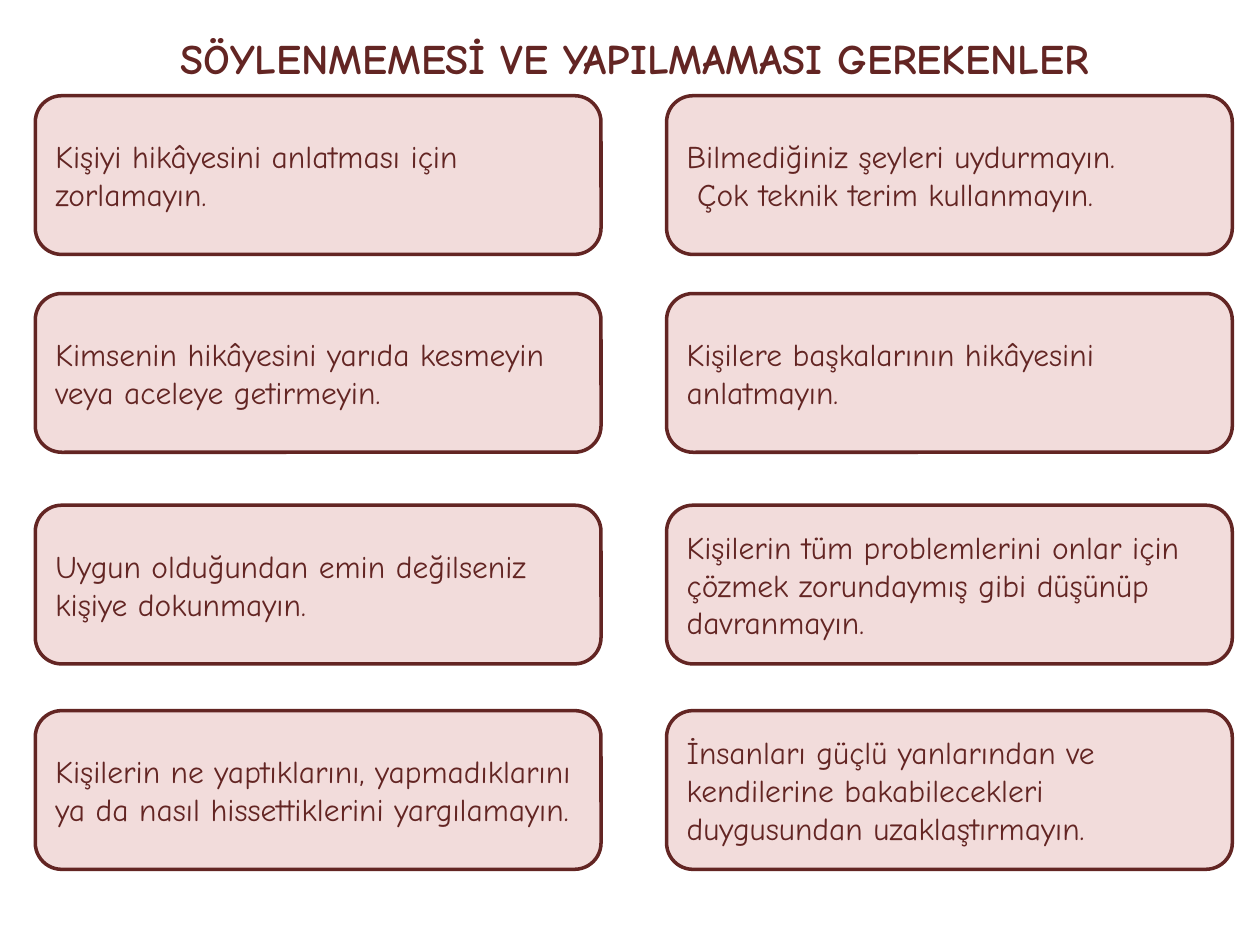
from dataclasses import dataclass

from pptx import Presentation
from pptx.dml.color import RGBColor
from pptx.enum.shapes import MSO_SHAPE
from pptx.enum.text import MSO_ANCHOR, PP_ALIGN
from pptx.util import Pt

EMU_PER_PX = 9144


def px(n):
    return n * EMU_PER_PX


@dataclass(frozen=True)
class Theme:
    font: str = "Comic Neue"
    ink: RGBColor = RGBColor(0x63, 0x25, 0x23)
    card_fill: RGBColor = RGBColor(0xF2, 0xDC, 0xDB)
    title_size: int = 24
    body_size: int = 18
    border: int = 2


class SlideBuilder:
    def __init__(self, slide, theme):
        self.s = slide
        self.theme = theme

    def fill_text(self, tf, paragraphs, size, align, anchor, bold=False):
        tf.word_wrap = True
        tf.vertical_anchor = anchor
        for i, text in enumerate(paragraphs):
            p = tf.add_paragraph() if i else tf.paragraphs[0]
            p.alignment = align
            r = p.add_run()
            r.text = text
            r.font.name = self.theme.font
            r.font.size = Pt(size)
            r.font.bold = bold
            r.font.color.rgb = self.theme.ink

    def title(self, text, x, y, w, h):
        sp = self.s.shapes.add_textbox(px(x), px(y), px(w), px(h))
        self.fill_text(sp.text_frame, [text], self.theme.title_size,
                       PP_ALIGN.CENTER, MSO_ANCHOR.TOP, bold=True)

    def card(self, paragraphs, x, y, w, h):
        sp = self.s.shapes.add_shape(
            MSO_SHAPE.ROUNDED_RECTANGLE, px(x), px(y), px(w), px(h))
        sp.shadow.inherit = False
        sp.fill.solid()
        sp.fill.fore_color.rgb = self.theme.card_fill
        sp.line.color.rgb = self.theme.ink
        sp.line.width = Pt(self.theme.border)
        self.fill_text(sp.text_frame, paragraphs, self.theme.body_size,
                       PP_ALIGN.LEFT, MSO_ANCHOR.MIDDLE)


TITLE = "SÖYLENMEMESİ VE YAPILMAMASI GEREKENLER"
COLUMN_LEFTS = (28, 529)
CARD_W, CARD_H = 449, 126
ROWS = [
    (76, ["Kişiyi hikâyesini anlatması için zorlamayın."],
     ["Bilmediğiniz şeyleri uydurmayın.", " Çok teknik terim kullanmayın."]),
    (233, ["Kimsenin hikâyesini yarıda kesmeyin veya aceleye getirmeyin."],
     ["Kişilere başkalarının hikâyesini anlatmayın."]),
    (401, ["Uygun olduğundan emin değilseniz kişiye dokunmayın."],
     ["Kişilerin tüm problemlerini onlar için çözmek zorundaymış gibi "
      "düşünüp davranmayın."]),
    (564, ["Kişilerin ne yaptıklarını, yapmadıklarını ya da nasıl "
           "hissettiklerini yargılamayın."],
     ["İnsanları güçlü yanlarından ve kendilerine bakabilecekleri "
      "duygusundan uzaklaştırmayın."]),
]


def main():
    prs = Presentation()
    prs.slide_width, prs.slide_height = px(1000), px(750)
    builder = SlideBuilder(prs.slides.add_slide(prs.slide_layouts[6]), Theme())
    builder.title(TITLE, 28, 21, 951, 91)
    for top, *cards in ROWS:
        for left, paragraphs in zip(COLUMN_LEFTS, cards):
            builder.card(paragraphs, left, top, CARD_W, CARD_H)
    prs.save("out.pptx")


if __name__ == "__main__":
    main()
